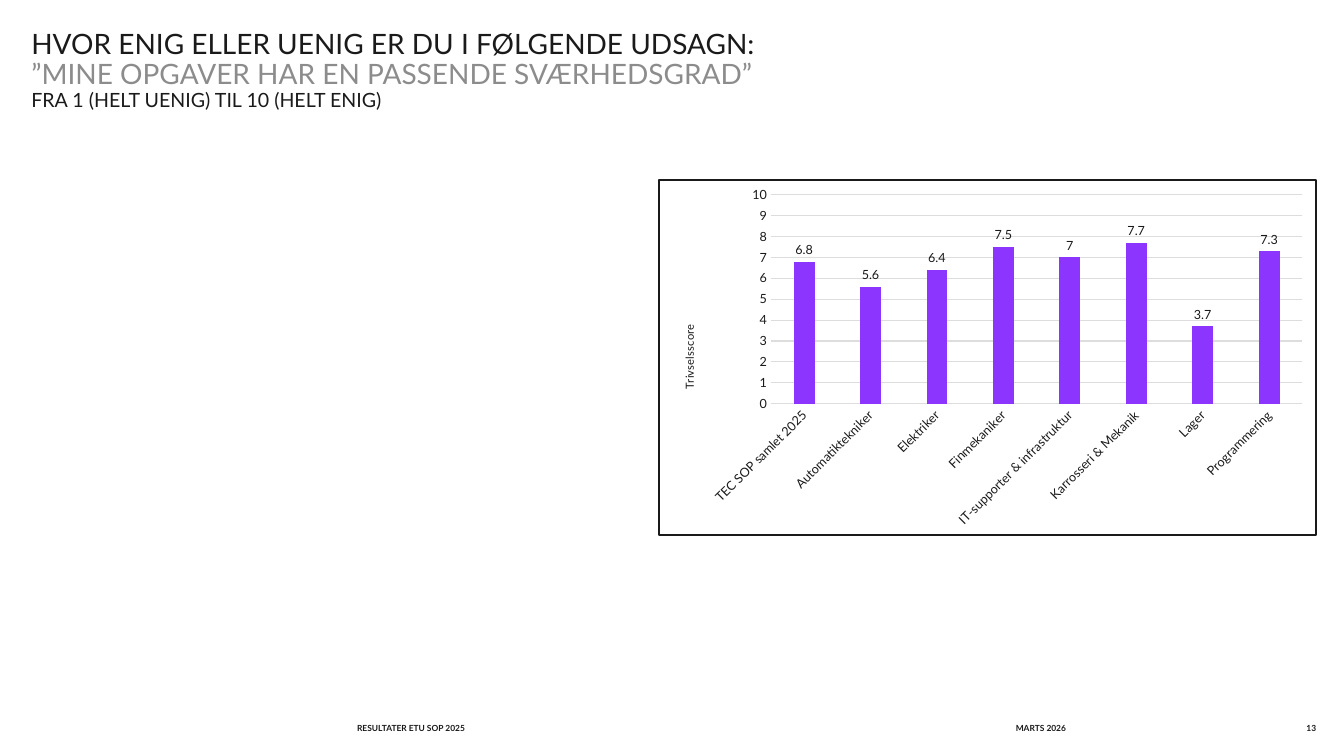
from pptx import Presentation
from pptx.chart.data import CategoryChartData as Data
from pptx.dml.color import RGBColor as RGB
from pptx.enum.chart import XL_CHART_TYPE as Kind, XL_LABEL_POSITION as Spot, XL_TICK_MARK as Tick
from pptx.enum.text import MSO_ANCHOR as Anchor, MSO_AUTO_SIZE as Fit, PP_ALIGN as Align
from pptx.oxml import parse_xml
from pptx.oxml.ns import nsdecls, qn
from pptx.util import Cm, Pt

HUES = {"ink": "1A1A1A", "gray": "8C8C8C", "grid": "DDDDDD", "bar": "8B35FF", "white": "FFFFFF"}

HEAD = [
    ("HVOR ENIG ELLER UENIG ER DU I FØLGENDE UDSAGN:", 20, "ink"),
    ("”MINE OPGAVER HAR EN PASSENDE SVÆRHEDSGRAD”", 20, "gray"),
    ("FRA 1 (HELT UENIG) TIL 10 (HELT ENIG)", 14, "ink"),
]
FOOT = [
    ("RESULTATER ETU SOP 2025", 9, 11.2, Align.LEFT),
    ("MARTS 2026", 25.6, 3.78, Align.LEFT),
    ("13", 31.39, 1.78, Align.RIGHT),
]
SCORES = {
    "TEC SOP samlet 2025": 6.8, "Automatiktekniker": 5.6, "Elektriker": 6.4,
    "Finmekaniker": 7.5, "IT-supporter & infrastruktur": 7,
    "Karrosseri & Mekanik": 7.7, "Lager": 3.7, "Programmering": 7.3,
}


def put(item, **values):
    for name, value in values.items():
        setattr(item, name, value)


def style(font, size, hue="ink", bold=False):
    put(font, name="Lato", size=Pt(size), bold=bold)
    font.color.rgb = RGB.from_string(HUES[hue])


def stroke(line):
    line.width = Pt(0.75)
    line.color.rgb = RGB.from_string(HUES["grid"])


def frame(shape, anchor):
    text = shape.text_frame
    put(text, word_wrap=True, auto_size=Fit.NONE, vertical_anchor=anchor,
        margin_left=0, margin_right=0, margin_top=0, margin_bottom=0)
    return text


def add_head(slide):
    title = slide.shapes.title
    put(title, left=Cm(0.79), top=Cm(0.76), width=Cm(32.38), height=Cm(2.97))
    text = frame(title, Anchor.TOP)
    for i, (line, size, hue) in enumerate(HEAD):
        para = text.add_paragraph() if i else text.paragraphs[0]
        put(para, alignment=Align.LEFT, line_spacing=0.9, space_before=Pt(0))
        run = para.add_run()
        run.text = line
        style(run.font, size, hue)


def add_foot(slide, line, left, width, align):
    box = slide.shapes.add_textbox(Cm(left), Cm(18.16), Cm(width), Cm(0.38))
    para = frame(box, Anchor.MIDDLE).paragraphs[0]
    put(para, text=line, alignment=align)
    style(para.runs[0].font, 6, bold=True)


def place(node, index, **spots):
    """Set a manual layout, in fractions of the chart area."""
    old = node.find(qn("c:layout"))
    if old is not None:
        node.remove(old)
    parts = "".join(f'<c:{key} val="{value}"/>' for key, value in spots.items())
    node.insert(index, parse_xml(
        f'<c:layout {nsdecls("c")}><c:manualLayout>{parts}</c:manualLayout></c:layout>'))


def add_border(chart):
    space = chart.element
    space.find(qn("c:chart")).addnext(parse_xml(
        f'<c:spPr {nsdecls("c", "a")}>'
        f'<a:solidFill><a:srgbClr val="{HUES["white"]}"/></a:solidFill>'
        f'<a:ln w="{Pt(1.5)}"><a:solidFill><a:srgbClr val="{HUES["ink"]}"/></a:solidFill></a:ln>'
        '</c:spPr>'))


def add_bars(slide):
    data = Data()
    data.categories = list(SCORES)
    data.add_series("Series 1", list(SCORES.values()))
    chart = slide.shapes.add_chart(
        Kind.COLUMN_CLUSTERED, Cm(16.59), Cm(4.52), Cm(16.59), Cm(8.99), data).chart
    put(chart, has_legend=False, has_title=False)
    style(chart.font, 10)
    add_border(chart)

    # Bars and their values
    plot = chart.plots[0]
    put(plot, gap_width=219, overlap=-27, vary_by_categories=False)
    fill = plot.series[0].format.fill
    fill.solid()
    fill.fore_color.rgb = RGB.from_string(HUES["bar"])
    labels = plot.series[0].data_labels
    put(labels, show_value=True, position=Spot.OUTSIDE_END)
    style(labels.font, 9)

    # Axes
    cats, vals = chart.category_axis, chart.value_axis
    for axis in (cats, vals):
        put(axis, major_tick_mark=Tick.NONE, minor_tick_mark=Tick.NONE)
        style(axis.tick_labels.font, 9)
    stroke(cats.format.line)
    cats._element.find(qn("c:txPr")).find(qn("a:bodyPr")).set("rot", "-2700000")
    put(vals, minimum_scale=0, maximum_scale=10, major_unit=1, has_major_gridlines=True)
    stroke(vals.major_gridlines.format.line)
    vals.format.line.fill.background()

    # Axis title and plot position
    name = vals.axis_title
    para = name.text_frame.paragraphs[0]
    run = para.add_run()
    run.text = "Trivselsscore"
    style(run.font, 8)
    body = name._element.find(".//" + qn("a:bodyPr"))
    body.set("rot", "-5400000")
    body.set("vert", "horz")
    place(name._element, 1, xMode="edge", yMode="edge", x=0.03, y=0.4)
    area = chart.element.find(".//" + qn("c:plotArea"))
    place(area, 0, layoutTarget="inner", xMode="edge", yMode="edge",
          x=0.17, y=0.04, w=0.81, h=0.59)


def main():
    deck = Presentation()
    put(deck, slide_width=Cm(33.87), slide_height=Cm(19.05))
    slide = deck.slides.add_slide(deck.slide_layouts[5])
    add_head(slide)
    add_bars(slide)
    for row in FOOT:
        add_foot(slide, *row)
    deck.save("out.pptx")


if __name__ == "__main__":
    main()
